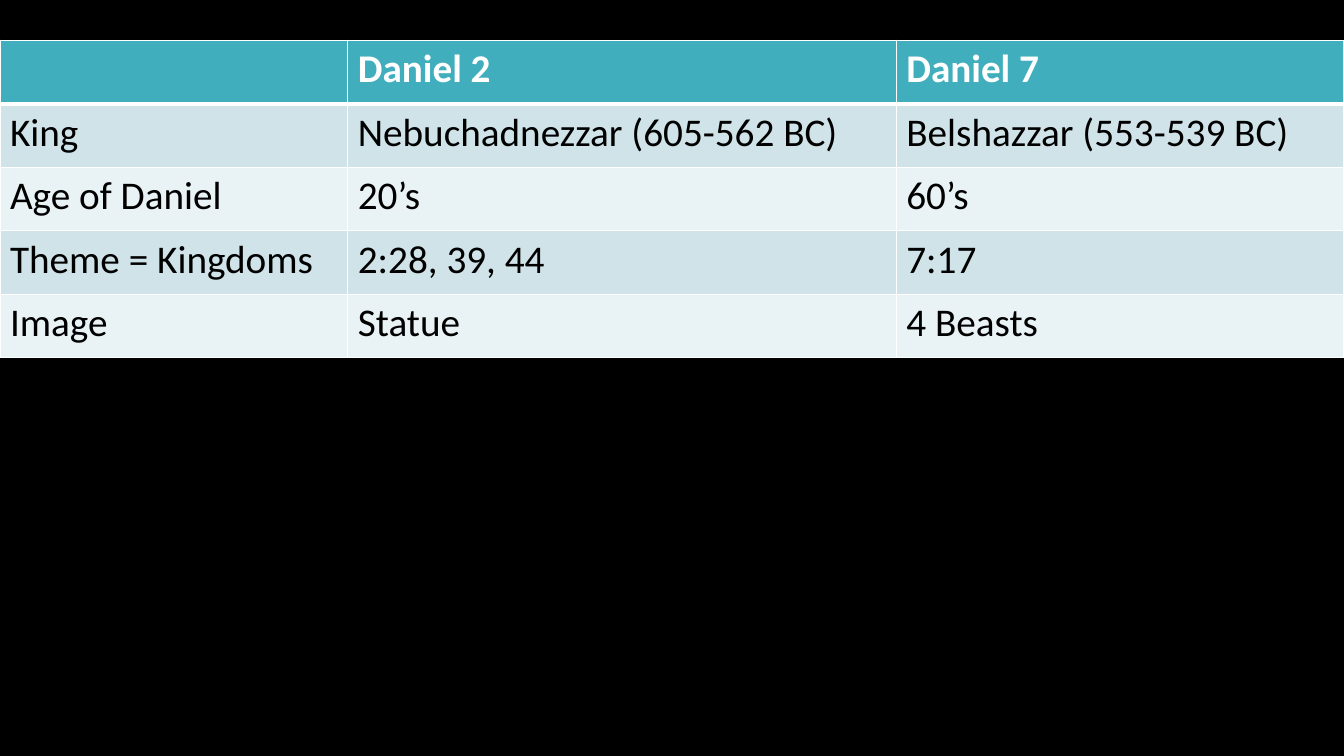
"""Build a slide with a table comparing Daniel 2 and Daniel 7."""
from lxml import etree
from pptx import Presentation
from pptx.dml.color import RGBColor
from pptx.oxml.ns import qn
from pptx.util import Inches, Pt

COLORS = {
    "background": "000000",
    "header": "41AEBD",
    "odd": "CFE3E8",
    "even": "E9F2F4",
    "line": "FFFFFF",
    "header_text": "FFFFFF",
    "body_text": "000000",
}
ROWS = [
    ["", "Daniel 2", "Daniel 7"],
    ["King", "Nebuchadnezzar (605-562 BC)", "Belshazzar (553-539 BC)"],
    ["Age of Daniel", "20’s", "60’s"],
    ["Theme = Kingdoms", "2:28, 39, 44", "7:17"],
    ["Image", "Statue", "4 Beasts"],
]
COL_WIDTHS = [3.45, 5.44, 4.44]
ROW_HEIGHT = 0.63


def add_border(cell, side, width):
    ln = etree.SubElement(cell._tc.get_or_add_tcPr(), qn(f"a:{side}"), w=str(Pt(width)))
    fill = etree.SubElement(ln, qn("a:solidFill"))
    etree.SubElement(fill, qn("a:srgbClr"), val=COLORS["line"])


prs = Presentation()
prs.slide_width = Inches(13.33)
prs.slide_height = Inches(7.5)
slide = prs.slides.add_slide(prs.slide_layouts[6])
slide.background.fill.solid()
slide.background.fill.fore_color.rgb = RGBColor.from_string(COLORS["background"])

table = slide.shapes.add_table(
    len(ROWS), len(COL_WIDTHS), Inches(0), Inches(0.4),
    Inches(sum(COL_WIDTHS)), Inches(ROW_HEIGHT * len(ROWS)),
).table
for column, width in zip(table.columns, COL_WIDTHS):
    column.width = Inches(width)

for i, values in enumerate(ROWS):
    table.rows[i].height = Inches(ROW_HEIGHT)
    band = "header" if i == 0 else "odd" if i % 2 else "even"
    ink = "header_text" if i == 0 else "body_text"
    for j, value in enumerate(values):
        cell = table.cell(i, j)
        add_border(cell, "lnL", 1)
        add_border(cell, "lnR", 1)
        add_border(cell, "lnT", 3 if i == 1 else 1)
        add_border(cell, "lnB", 3 if i == 0 else 1)
        cell.fill.solid()
        cell.fill.fore_color.rgb = RGBColor.from_string(COLORS[band])
        p = cell.text_frame.paragraphs[0]
        p.text = value
        for r in p.runs:
            r.font.name = "Calibri"
            r.font.size = Pt(28)
            r.font.bold = i == 0
            r.font.color.rgb = RGBColor.from_string(COLORS[ink])

prs.save("out.pptx")
